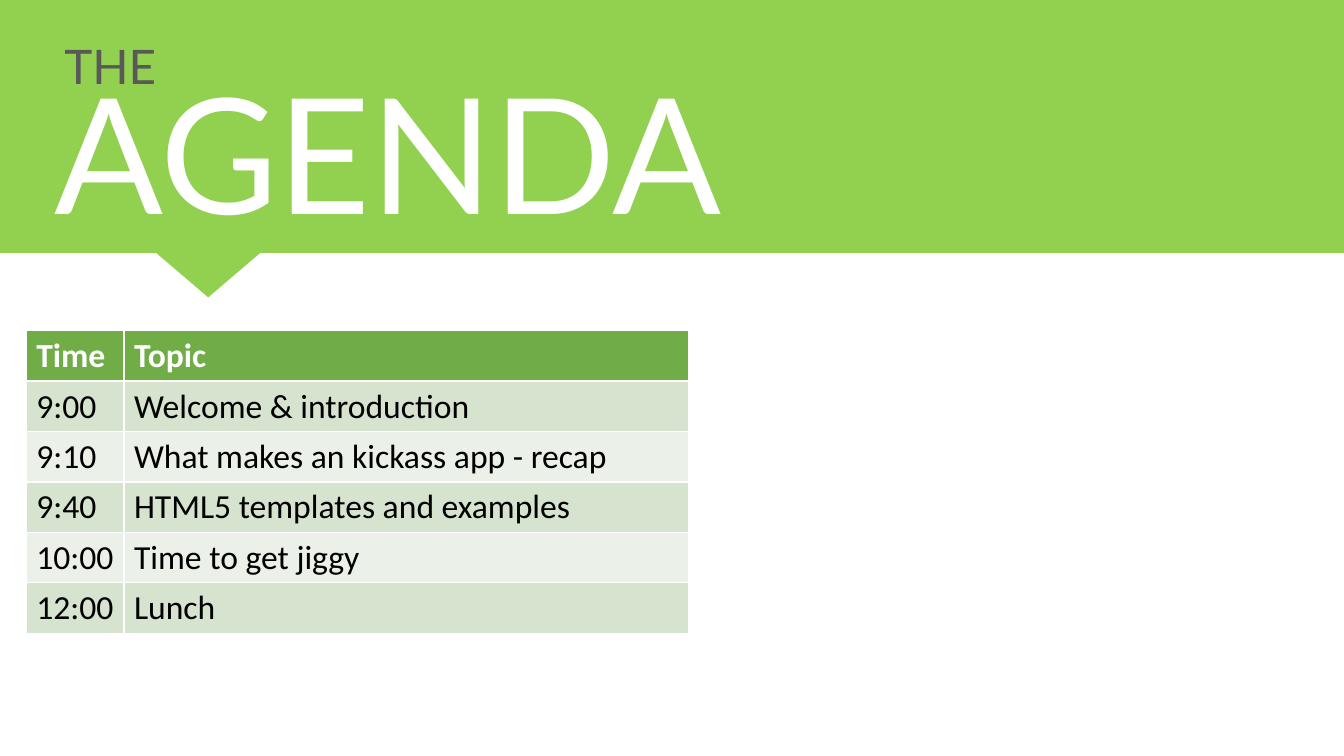
from pptx import Presentation
from pptx.dml.color import RGBColor
from pptx.enum.shapes import MSO_SHAPE
from pptx.util import Inches, Pt

WIDTH, HEIGHT = 13.33, 7.5
COLORS = {
    "banner": "92D050",
    "kicker": "595959",
    "white": "FFFFFF",
    "header": "70AD47",
    "odd": "D5E3CF",
    "even": "EBF1E9",
    "body": "000000",
}
TITLES = [
    ("THE", 34, "kicker", (0.54, 0.32, 3.39, 0.67)),
    ("AGENDA", 115, "white", (0.44, 0.48, 7.31, 2.04)),
]
AGENDA = [
    ("Time", "Topic"),
    ("9:00", "Welcome & introduction"),
    ("9:10", "What makes an kickass app - recap"),
    ("9:40", "HTML5 templates and examples"),
    ("10:00", "Time to get jiggy"),
    ("12:00", "Lunch"),
]
BANNER_HEIGHT = 2.51
POINTER_LEFT, POINTER_WIDTH, POINTER_HEIGHT = 1.55, 1.03, 0.44
TABLE_LEFT, TABLE_TOP, ROW_HEIGHT = 0.26, 3.28, 0.5
COLUMN_WIDTHS = (0.97, 5.6)


def color(name):
    return RGBColor.from_string(COLORS[name])


def box(*lengths):
    return [Inches(length) for length in lengths]


def format_text(text_frame, font_name, size, color_name, bold=False):
    for run in text_frame.paragraphs[0].runs:
        run.font.name = font_name
        run.font.size = Pt(size)
        run.font.bold = bold
        run.font.color.rgb = color(color_name)


def add_banner_part(slide, kind, *lengths):
    shape = slide.shapes.add_shape(kind, *box(*lengths))
    shape.shadow.inherit = False
    shape.fill.solid()
    shape.fill.fore_color.rgb = color("banner")
    shape.line.fill.background()
    return shape


def add_title(slide, text, size, color_name, lengths):
    text_frame = slide.shapes.add_textbox(*box(*lengths)).text_frame
    text_frame.word_wrap = True
    text_frame.text = text
    format_text(text_frame, "Lato", size, color_name)


def add_agenda(slide):
    table = slide.shapes.add_table(
        len(AGENDA), len(COLUMN_WIDTHS),
        *box(TABLE_LEFT, TABLE_TOP, sum(COLUMN_WIDTHS), ROW_HEIGHT * len(AGENDA)),
    ).table
    for column, width in zip(table.columns, COLUMN_WIDTHS):
        column.width = Inches(width)
    for row_index, row in enumerate(AGENDA):
        is_header = row_index == 0
        fill_name = "header" if is_header else ("even", "odd")[row_index % 2]
        for column_index, text in enumerate(row):
            cell = table.cell(row_index, column_index)
            cell.fill.solid()
            cell.fill.fore_color.rgb = color(fill_name)
            cell.text_frame.text = text
            format_text(cell.text_frame, "Calibri", 24,
                        "white" if is_header else "body", is_header)


def main():
    presentation = Presentation()
    presentation.slide_width, presentation.slide_height = box(WIDTH, HEIGHT)
    slide = presentation.slides.add_slide(presentation.slide_layouts[6])
    add_banner_part(slide, MSO_SHAPE.RECTANGLE, 0, 0, WIDTH, BANNER_HEIGHT)
    for title in TITLES:
        add_title(slide, *title)
    pointer = add_banner_part(slide, MSO_SHAPE.ISOSCELES_TRIANGLE, POINTER_LEFT,
                              BANNER_HEIGHT, POINTER_WIDTH, POINTER_HEIGHT)
    pointer.rotation = 180
    add_agenda(slide)
    presentation.save("out.pptx")


if __name__ == "__main__":
    main()
